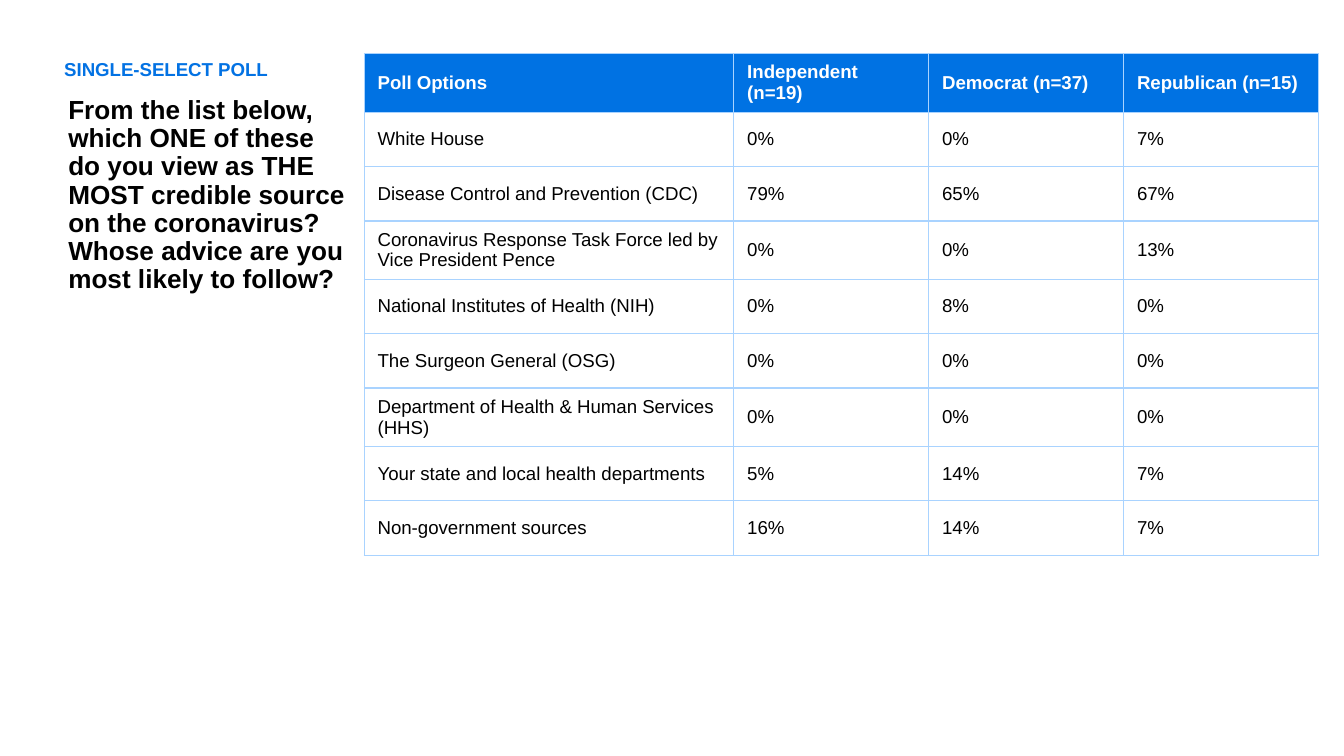
import dataclasses

import lxml.etree
import pptx
import pptx.dml.color
import pptx.enum.text
import pptx.oxml.ns
import pptx.util

EMU_PER_PX = 4572


@dataclasses.dataclass(frozen=True)
class Theme:
    font: str = "Arial"
    black: str = "000000"
    white: str = "FFFFFF"
    label_blue: str = "0372E3"
    header_blue: str = "0072E3"
    border_blue: str = "A9D3FF"
    question_size: int = 14
    body_size: int = 10
    border_width: float = 0.75


THEME = Theme()

HEADERS = ["Poll Options", "Independent (n=19)", "Democrat (n=37)", "Republican (n=15)"]
RESULTS = [
    ("White House", 0, 0, 7),
    ("Disease Control and Prevention (CDC)", 79, 65, 67),
    ("Coronavirus Response Task Force led by Vice President Pence", 0, 0, 13),
    ("National Institutes of Health (NIH)", 0, 8, 0),
    ("The Surgeon General (OSG)", 0, 0, 0),
    ("Department of Health & Human Services (HHS)", 0, 0, 0),
    ("Your state and local health departments", 5, 14, 7),
    ("Non-government sources", 16, 14, 7),
]
QUESTION = (
    "From the list below, which ONE of these do you view as THE MOST credible source "
    "on the coronavirus? Whose advice are you most likely to follow?"
)


def px(length):
    return pptx.util.Emu(length * EMU_PER_PX)


def rgb(color):
    return pptx.dml.color.RGBColor.from_string(color)


def write_text(text_frame, text, *, size=THEME.body_size, color=THEME.black,
               bold=False, line_spacing=None, space_before=None):
    text_frame.word_wrap = True
    paragraph = text_frame.paragraphs[0]
    paragraph.line_spacing = line_spacing
    if space_before is not None:
        paragraph.space_before = pptx.util.Pt(space_before)
    run = paragraph.add_run()
    run.text = text
    run.font.name = THEME.font
    run.font.size = pptx.util.Pt(size)
    run.font.bold = bold
    run.font.color.rgb = rgb(color)


def set_borders(cell):
    properties = cell._tc.get_or_add_tcPr()
    for position, side in enumerate(("lnL", "lnR", "lnT", "lnB")):
        line = lxml.etree.Element(pptx.oxml.ns.qn(f"a:{side}"))
        line.set("w", str(pptx.util.Pt(THEME.border_width)))
        fill = lxml.etree.SubElement(line, pptx.oxml.ns.qn("a:solidFill"))
        color = lxml.etree.SubElement(fill, pptx.oxml.ns.qn("a:srgbClr"))
        color.set("val", THEME.border_blue)
        properties.insert(position, line)


def add_question_panel(slide, left, top, width, height):
    label_height = 56
    question_top = 54
    question_indent = 6
    label = slide.shapes.add_textbox(px(left), px(top), px(width), px(label_height))
    write_text(label.text_frame, "SINGLE-SELECT POLL", color=THEME.label_blue,
               bold=True, line_spacing=0.9, space_before=10)
    question = slide.shapes.add_textbox(
        px(left + question_indent), px(top + question_top),
        px(width - question_indent), px(height - question_top))
    write_text(question.text_frame, QUESTION, size=THEME.question_size,
               bold=True, line_spacing=0.9, space_before=10)


def add_results_table(slide, left, top, width, height):
    rows = [HEADERS] + [(name, *(f"{share}%" for share in shares))
                        for name, *shares in RESULTS]
    table = slide.shapes.add_table(
        len(rows), len(HEADERS), px(left), px(top), px(width), px(height)).table
    party_width = 290
    party_count = len(HEADERS) - 1
    widths = [width - party_count * party_width] + [party_width] * party_count
    for column, column_width in zip(table.columns, widths):
        column.width = px(column_width)
    for row_index, values in enumerate(rows):
        table.rows[row_index].height = px(height // len(rows))
        is_header = row_index == 0
        for column_index, value in enumerate(values):
            cell = table.cell(row_index, column_index)
            cell.vertical_anchor = pptx.enum.text.MSO_ANCHOR.MIDDLE
            cell.fill.solid()
            cell.fill.fore_color.rgb = rgb(THEME.header_blue if is_header else THEME.white)
            set_borders(cell)
            write_text(cell.text_frame, value, bold=is_header,
                       color=THEME.white if is_header else THEME.black)


def main():
    presentation = pptx.Presentation()
    presentation.slide_width = px(2000)
    presentation.slide_height = px(1125)
    slide = presentation.slides.add_slide(presentation.slide_layouts[6])
    add_question_panel(slide, left=76, top=80, width=466, height=936)
    add_results_table(slide, left=542, top=80, width=1420, height=732)
    presentation.save("out.pptx")


if __name__ == "__main__":
    main()
